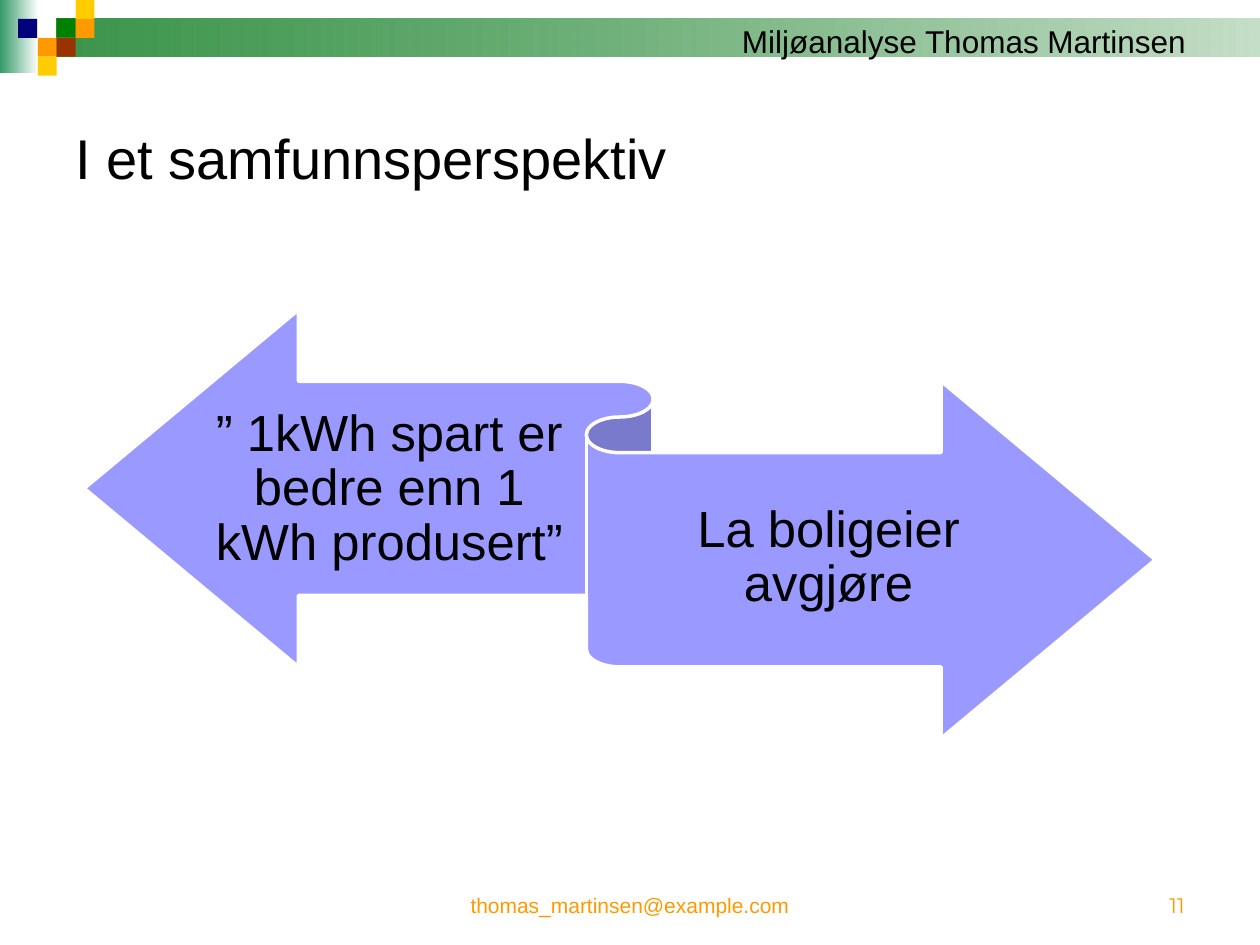
import pptx
import pptx.util
import pptx.dml.color
import pptx.enum.shapes
import pptx.enum.text
import pptx.oxml
import pptx.oxml.ns
import lxml.etree

Pt = pptx.util.Pt
RGB = pptx.dml.color.RGBColor
SHAPE = pptx.enum.shapes.MSO_SHAPE
ALIGN = pptx.enum.text.PP_ALIGN
ANCHOR = pptx.enum.text.MSO_ANCHOR

BLACK = RGB(0x00, 0x00, 0x00)
WHITE = RGB(0xFF, 0xFF, 0xFF)
TEAL = RGB(0x33, 0x99, 0x66)
BAR_GREEN = RGB(0x06, 0x78, 0x19)
BAR_PALE = RGB(0xC5, 0xDE, 0xC8)
GREEN = RGB(0x00, 0x80, 0x00)
YELLOW = RGB(0xFF, 0xCC, 0x00)
ORANGE = RGB(0xFF, 0x99, 0x00)
NAVY = RGB(0x00, 0x00, 0x7D)
BROWN = RGB(0x99, 0x33, 0x00)
LAVENDER = RGB(0x99, 0x99, 0xFF)


def add_block(x, y, w, h, *colors):
    """Rectangle without outline: one colour is solid, two are a gradient."""
    s = slide.shapes.add_shape(SHAPE.RECTANGLE, Pt(x), Pt(y), Pt(w), Pt(h))
    s.shadow.inherit = False
    s.line.fill.background()
    if len(colors) == 1:
        s.fill.solid()
        s.fill.fore_color.rgb = colors[0]
    else:
        s.fill.gradient()
        s.fill.gradient_angle = 0
        for stop, position, color in zip(s.fill.gradient_stops, (0, 1), colors):
            stop.position = position
            stop.color.rgb = color
    return s


def add_label(text, x, y, w, h, size, color, align, anchor, font="Arial"):
    sp = slide.shapes.add_textbox(Pt(x), Pt(y), Pt(w), Pt(h))
    tf = sp.text_frame
    tf.word_wrap = True
    tf.vertical_anchor = anchor
    p = tf.paragraphs[0]
    p.text = text
    p.alignment = align
    p.font.name = font
    p.font.size = Pt(size)
    p.font.color.rgb = color
    return tf


prs = pptx.Presentation()
prs.slide_width, prs.slide_height = Pt(720), Pt(540)
slide = prs.slides.add_slide(prs.slide_layouts[5])

# Header band
add_block(0, 0, 22, 41.8, TEAL, WHITE)
bar = add_block(32.4, 10.5, 687.6, 22, BAR_GREEN, BAR_PALE)
first_color = bar._element.spPr.find(".//" + pptx.oxml.ns.qn("a:srgbClr"))
lxml.etree.SubElement(first_color, pptx.oxml.ns.qn("a:alpha"), val="78000")

# Mosaic of small squares: left, top, colour
TILE = 10.8
for x, y, color in (
    (32.4, 10.5, GREEN),
    (43.2, 0, YELLOW),
    (43.2, 10.8, ORANGE),
    (21.6, 21.6, ORANGE),
    (10.4, 10.8, NAVY),
    (32.4, 21.6, BROWN),
    (21.6, 32.4, YELLOW),
):
    add_block(x, y, TILE, TILE, color)

# Header text
tf = add_label("Miljøanalyse Thomas Martinsen", 416.9, 9, 268.6, 28.8, 18,
               BLACK, ALIGN.LEFT, ANCHOR.TOP)
tf.word_wrap = False

# Title
title = slide.shapes.title
title.left, title.top, title.width, title.height = Pt(36), Pt(36), Pt(648), Pt(108)
tf = title.text_frame
tf.text = "I et samfunnsperspektiv"
tf.vertical_anchor = ANCHOR.MIDDLE
p = tf.paragraphs[0]
p.alignment = ALIGN.LEFT
p.font.name = "Arial"
p.font.size = Pt(32)
p.font.color.rgb = BLACK

# Footer
add_label("thomas_martinsen@example.com", 246, 492, 228, 36, 12,
          ORANGE, ALIGN.CENTER, ANCHOR.BOTTOM)
add_label("11", 516, 492, 168, 36, 12,
          ORANGE, ALIGN.RIGHT, ANCHOR.BOTTOM, "Montserrat")

# Two-way ribbon
ribbon = slide.shapes.add_shape(SHAPE.LEFT_RIGHT_RIBBON, Pt(48.2), Pt(177.1), Pt(612), Pt(244.8))
ribbon.shadow.inherit = False
ribbon.fill.solid()
ribbon.fill.fore_color.rgb = LAVENDER
ribbon.line.color.rgb = WHITE
ribbon.line.width = Pt(2)

# Ribbon texts
for text, x, y, w in (
    ("” 1kWh spart er bedre enn 1 kWh produsert”", 121.6, 220, 202),
    ("La boligeier avgjøre", 354.2, 259.2, 238.7),
):
    tf = add_label(text, x, y, w, 120, 29, BLACK, ALIGN.CENTER, ANCHOR.MIDDLE)
    tf.margin_left = tf.margin_right = 0
    tf.margin_top, tf.margin_bottom = Pt(7.9), Pt(8.6)
    tf.paragraphs[0].line_spacing = 0.9

prs.save("out.pptx")
